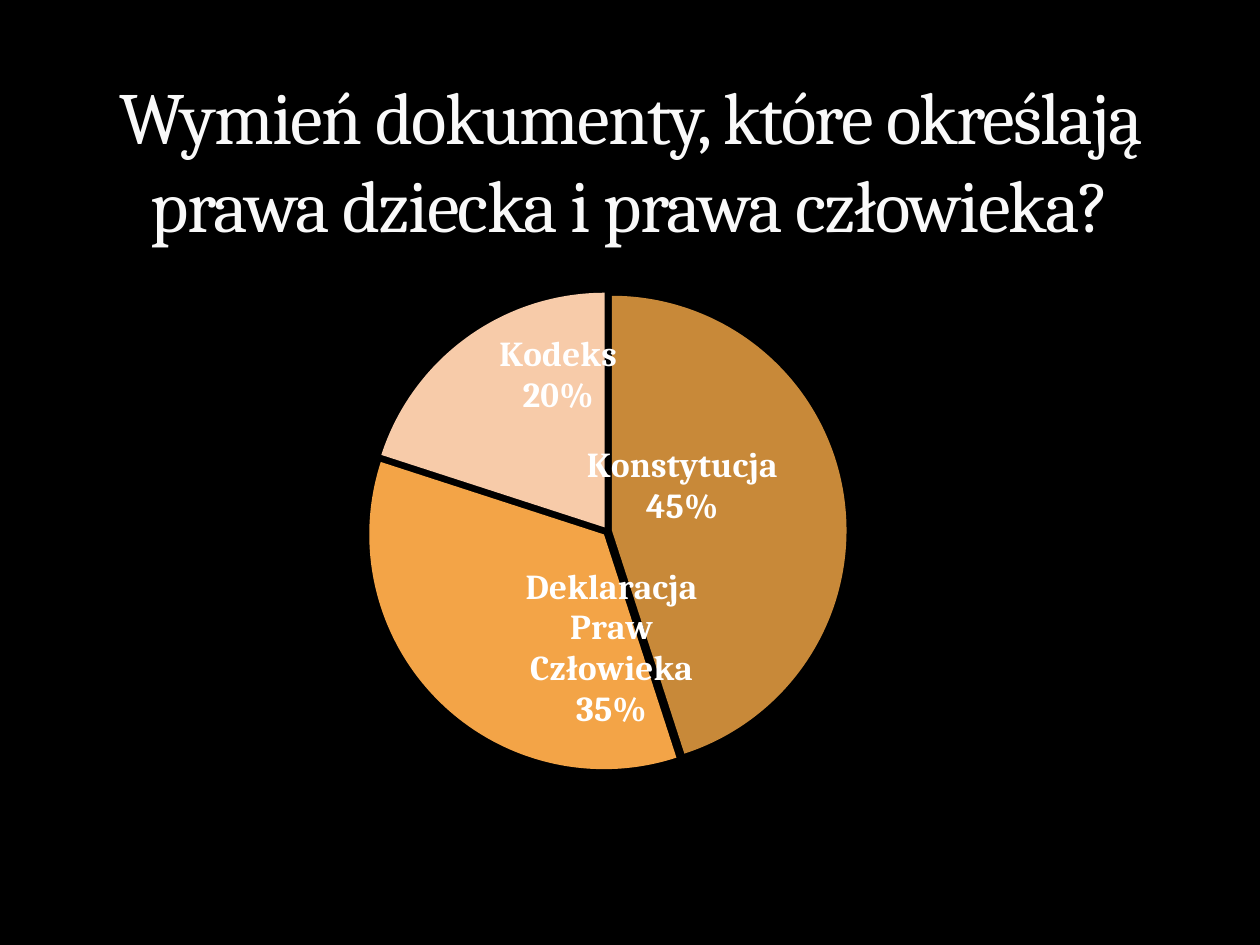
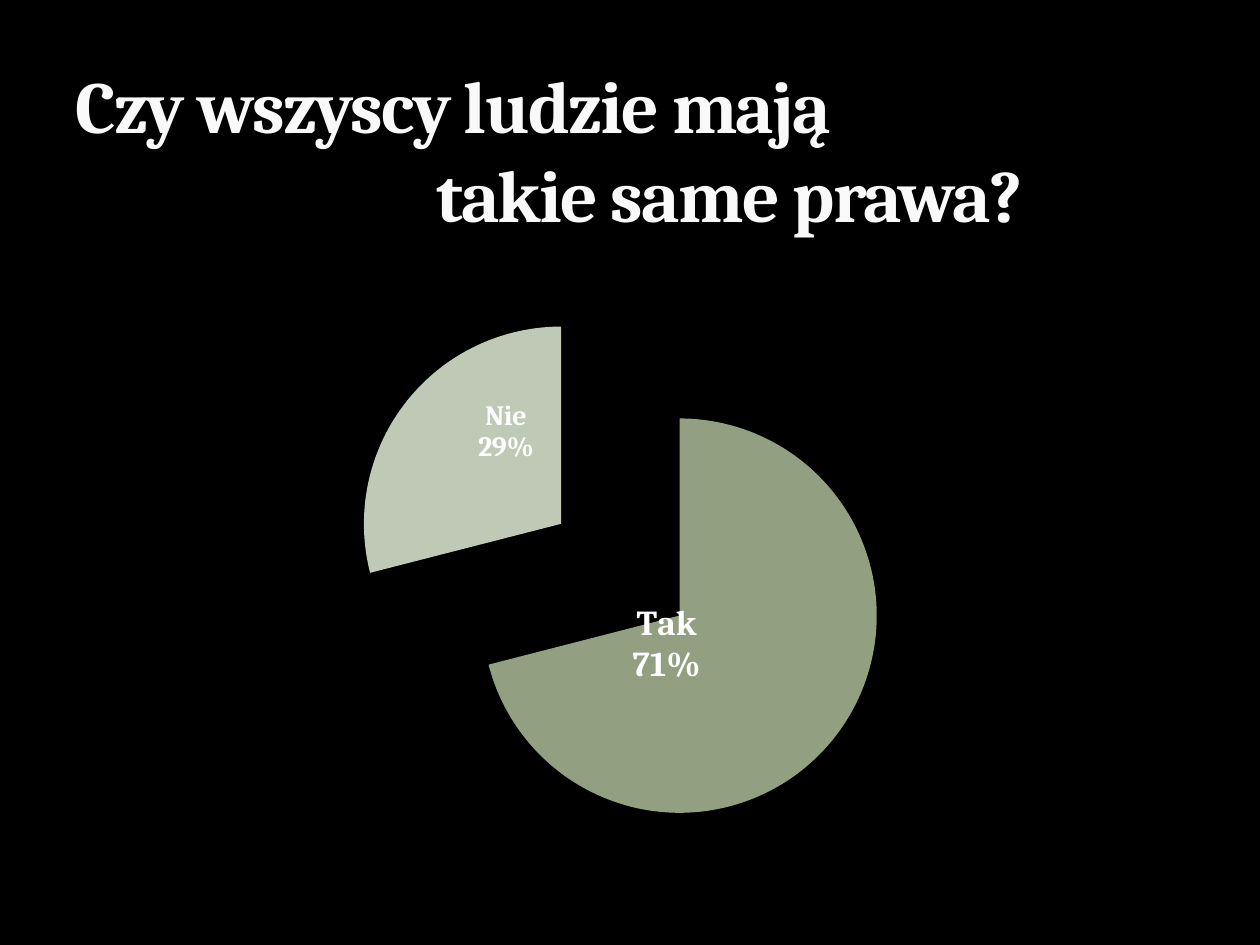
from dataclasses import dataclass

from lxml.etree import SubElement
from pptx import Presentation
from pptx.chart.data import CategoryChartData
from pptx.dml.color import RGBColor
from pptx.enum.chart import XL_CHART_TYPE as ChartType, XL_LABEL_POSITION as LabelPosition
from pptx.enum.text import MSO_ANCHOR as Anchor, MSO_AUTO_SIZE as AutoSize, PP_ALIGN as Align
from pptx.oxml.ns import qn
from pptx.util import Pt


@dataclass(frozen=True)
class Theme:
    font: str = "Cambria"
    background: RGBColor = RGBColor.from_string("000000")
    title_color: RGBColor = RGBColor.from_string("F9F9F9")
    label_color: RGBColor = RGBColor.from_string("FFFFFF")
    title_size: int = 42
    label_large: int = 20
    label_small: int = 16
    tracking: str = "-100"
    ochre: str = "C88939"
    orange: str = "F3A447"
    peach: str = "F7CBA9"
    sage: str = "92A081"
    pale_sage: str = "C0C9B5"


THEME = Theme()


@dataclass(frozen=True)
class Slice:
    answer: str
    percent: int
    color: str
    label_size: int
    label_shift: tuple


def apply_format(target, values):
    for attribute, value in values.items():
        setattr(target, attribute, value)


def place(element, box):
    apply_format(element, dict(zip(("left", "top", "width", "height"), map(Pt, box))))


def add_question(slide, box, lines, bold=False):
    question = slide.shapes.title
    place(question, box)
    frame = question.text_frame
    apply_format(frame, {
        "auto_size": AutoSize.NONE, "word_wrap": True, "vertical_anchor": Anchor.BOTTOM,
    })
    for number, (wording, align, indent) in enumerate(lines):
        line = frame.add_paragraph() if number else frame.paragraphs[0]
        apply_format(line, {"alignment": align, "space_before": Pt(0)})
        line._p.get_or_add_pPr().set("marL", str(Pt(indent)))
        run = line.add_run()
        run.text = wording
        apply_format(run.font, {"name": THEME.font, "size": Pt(THEME.title_size), "bold": bold})
        run.font.color.rgb = THEME.title_color
        run._r.get_or_add_rPr().set("spc", THEME.tracking)


def fill_layout(layout, values):
    manual = SubElement(layout, qn("c:manualLayout"))
    for tag, value in values.items():
        SubElement(manual, qn(f"c:{tag}")).set("val", str(value))


def set_plot_area(chart, area):
    plot_area = chart._chartSpace.chart.plotArea
    for old_layout in plot_area.findall(qn("c:layout")):
        plot_area.remove(old_layout)
    layout = SubElement(plot_area, qn("c:layout"))
    plot_area.insert(0, layout)
    fill_layout(layout, {
        "layoutTarget": "inner", "xMode": "edge", "yMode": "edge",
        **dict(zip("xywh", area)),
    })


def set_explosion(series, percent):
    explosion = SubElement(series._element, qn("c:explosion"))
    explosion.set("val", str(percent))
    series._element.find(qn("c:tx")).addnext(explosion)


def show_answer_and_percent(labels):
    for tag, shown in (("showVal", 0), ("showCatName", 1), ("showPercent", 1)):
        labels.find(qn(f"c:{tag}")).set("val", str(shown))
    separator = SubElement(labels, qn("c:separator"))
    separator.text = "\n"
    labels.find(qn("c:showBubbleSize")).addnext(separator)


def format_slice(point, part):
    point.format.fill.solid()
    point.format.fill.fore_color.rgb = RGBColor.from_string(part.color)
    point.format.line.fill.background()
    label = point.data_label
    label.position = LabelPosition.CENTER
    apply_format(label.font, {"name": THEME.font, "size": Pt(part.label_size), "bold": True})
    label.font.color.rgb = THEME.label_color
    settings = label._dLbl
    show_answer_and_percent(settings)
    layout = SubElement(settings, qn("c:layout"))
    settings.find(qn("c:idx")).addnext(layout)
    fill_layout(layout, dict(zip("xy", part.label_shift)))


def add_answer_pie(slide, box, plot_area, explosion, slices):
    answers = CategoryChartData(number_format="General")
    answers.categories = [part.answer for part in slices]
    answers.add_series("Series 1", [part.percent for part in slices])
    chart = slide.shapes.add_chart(ChartType.PIE, *map(Pt, box), answers).chart
    apply_format(chart, {"has_title": False, "has_legend": False})
    apply_format(chart.font, {"name": THEME.font, "size": Pt(THEME.label_small)})
    chart.font.color.rgb = THEME.label_color
    set_plot_area(chart, plot_area)
    pie = chart.plots[0]
    pie.vary_by_categories = True
    series = pie.series[0]
    set_explosion(series, explosion)
    for number, part in enumerate(slices):
        format_slice(series.points[number], part)


def main():
    deck = Presentation()
    apply_format(deck, {"slide_width": Pt(720), "slide_height": Pt(540)})
    backdrop = deck.slide_master.background.fill
    backdrop.solid()
    backdrop.fore_color.rgb = THEME.background
    title_only = deck.slide_layouts[5]

    documents = deck.slides.add_slide(title_only)
    add_question(documents, (36, 12, 648, 133), [
        ("Wymień dokumenty, które określają prawa dziecka i prawa człowieka?", Align.CENTER, 0),
    ])
    add_answer_pie(documents, (36, 120, 648, 360), (0.06, 0.13, 0.84, 0.76), 2, [
        Slice("Konstytucja", 45, THEME.ochre, THEME.label_large, (-0.04, -0.04)),
        Slice("Deklaracja Praw Człowieka", 35, THEME.orange, THEME.label_large, (0.08, 0.05)),
        Slice("Kodeks", 20, THEME.peach, THEME.label_large, (0.02, -0.09)),
    ])

    equality = deck.slides.add_slide(title_only)
    add_question(equality, (36, 12, 648, 127), [
        ("Czy wszyscy ludzie mają", Align.LEFT, 0),
        ("takie same prawa?", Align.LEFT, 206),
    ], bold=True)
    add_answer_pie(equality, (37, 151, 648, 360), (0.25, 0.05, 0.48, 0.87), 38, [
        Slice("Tak", 71, THEME.sage, THEME.label_large, (-0.08, -0.05)),
        Slice("Nie", 29, THEME.pale_sage, THEME.label_small, (0.02, -0.05)),
    ])

    deck.save("out.pptx")


if __name__ == "__main__":
    main()
